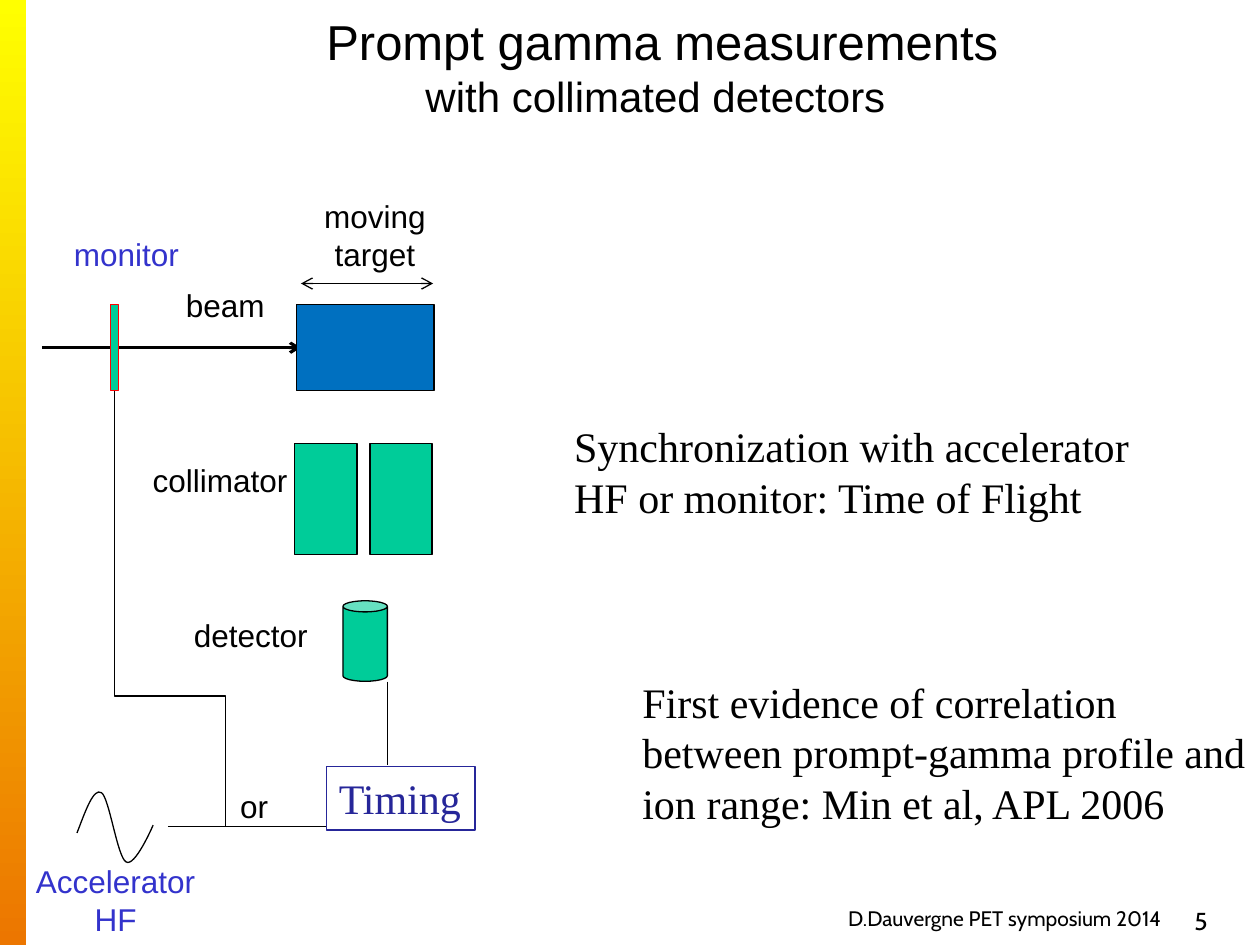
from dataclasses import dataclass

from lxml import etree
from pptx import Presentation
from pptx.dml.color import RGBColor
from pptx.enum.shapes import MSO_CONNECTOR, MSO_SHAPE
from pptx.enum.text import MSO_ANCHOR, PP_ALIGN
from pptx.oxml.ns import qn
from pptx.util import Pt

RECTANGLE, CAN = MSO_SHAPE.RECTANGLE, MSO_SHAPE.CAN
STRAIGHT, ELBOW = MSO_CONNECTOR.STRAIGHT, MSO_CONNECTOR.ELBOW
LEFT, CENTER = PP_ALIGN.LEFT, PP_ALIGN.CENTER
TOP, MIDDLE = MSO_ANCHOR.TOP, MSO_ANCHOR.MIDDLE


@dataclass(frozen=True)
class Theme:
    black: str = "000000"
    label_blue: str = "3333CC"
    timing_blue: str = "262699"
    target_blue: str = "0070C0"
    green: str = "00CC99"
    red: str = "FF0000"
    bar_top: str = "FFFF00"
    bar_bottom: str = "EC7600"
    sans: str = "Arial"
    serif: str = "Times New Roman"
    footer: str = "Cabin"
    title_size: int = 28
    body_size: int = 24
    label_size: int = 18
    number_size: int = 14
    footer_size: int = 12
    thin: float = 0.75
    thick: float = 1.75


THEME = Theme()


def color(value):
    return RGBColor.from_string(value)


def points(values):
    return [Pt(value) for value in values]


def write(frame, lines, font, ink=THEME.black, align=LEFT, wrap=True, anchor=TOP):
    """Fill a text frame with (text, size) paragraphs."""
    frame.word_wrap = wrap
    frame.vertical_anchor = anchor
    for index, (text, size) in enumerate(lines):
        para = frame.add_paragraph() if index else frame.paragraphs[0]
        para.text = text
        para.alignment = align
        para.font.name = font
        para.font.size = Pt(size)
        para.font.color.rgb = color(ink)


def add_text(page, place, lines, font, **style):
    box = page.shapes.add_textbox(*points(place))
    write(box.text_frame, lines, font, **style)


def add_label(page, place, text, ink=THEME.black):
    add_text(page, place, [(text, THEME.label_size)], THEME.sans, ink=ink, align=CENTER)


def set_outline(shape, ink, width=THEME.thin):
    shape.line.color.rgb = color(ink)
    shape.line.width = Pt(width)


def add_block(page, kind, place, fill=None, outline=THEME.black):
    block = page.shapes.add_shape(kind, *points(place))
    block.shadow.inherit = False
    if fill:
        block.fill.solid()
        block.fill.fore_color.rgb = color(fill)
    else:
        block.fill.background()
    set_outline(block, outline)
    return block


def add_line(page, ends, width=THEME.thin, arrows=(), kind=STRAIGHT):
    """Draw a connector; arrows names the ends ("headEnd", "tailEnd") to mark."""
    line = page.shapes.add_connector(kind, *points(ends))
    set_outline(line, THEME.black, width)
    for end in arrows:
        etree.SubElement(line.line._get_or_add_ln(), qn(f"a:{end}"), type="arrow")
    etree.SubElement(line._element.spPr, qn("a:effectLst"))
    return line


def add_vertical_elbow(page, start, end, bend):
    """Elbow that leaves and arrives vertically: a flipped elbow turned by 270 degrees."""
    (x1, y1), (x2, y2) = start, end
    middle_x, middle_y = (x1 + x2) / 2, (y1 + y2) / 2
    half_length, half_width = (y2 - y1) / 2, (x2 - x1) / 2
    ends = (middle_x + half_length, middle_y - half_width,
            middle_x - half_length, middle_y + half_width)
    elbow = add_line(page, ends, kind=ELBOW)
    properties = elbow._element.spPr
    properties.find(qn("a:xfrm")).set("rot", str(270 * 60000))
    adjustments = properties.find(qn("a:prstGeom")).find(qn("a:avLst"))
    etree.SubElement(adjustments, qn("a:gd"), name="adj1", fmla=f"val {round(bend * 100000)}")


def add_curve(page, start, controls):
    """Draw an open curve; every three control points make one Bézier segment."""
    builder = page.shapes.build_freeform(*points(start), scale=1.0)
    builder.add_line_segments([points(point) for point in controls], close=False)
    curve = builder.convert_to_shape()
    curve.shadow.inherit = False
    curve.fill.background()
    set_outline(curve, THEME.black)
    outline = next(curve._element.iter(qn("a:path")))
    segments = outline.findall(qn("a:lnTo"))
    for first in range(0, len(segments), 3):
        bezier = etree.SubElement(outline, qn("a:cubicBezTo"))
        for segment in segments[first:first + 3]:
            bezier.append(segment[0])
            outline.remove(segment)


def add_frame(page):
    """Side bar, footer, page number and title."""
    bar = add_block(page, RECTANGLE, (0, 0, 15, 540))
    bar.line.fill.background()
    bar.fill.gradient()
    bar.fill.gradient_angle = 270
    for stop, value in zip(bar.fill.gradient_stops, (THEME.bar_top, THEME.bar_bottom)):
        stop.color.rgb = color(value)
    add_text(page, (473, 514, 202.5, 22), [("D.Dauvergne PET symposium 2014", THEME.footer_size)],
             THEME.footer, align=CENTER, wrap=False)
    add_text(page, (675.5, 514, 41, 24), [("5", THEME.number_size)], THEME.footer, wrap=False)
    add_text(page, (39, 0, 671, 76),
             [(" Prompt gamma measurements", THEME.title_size),
              ("with collimated detectors", THEME.body_size)],
             THEME.sans, align=CENTER, anchor=MIDDLE)


def add_setup(page):
    """Beam, target, collimator and detector."""
    add_line(page, (24, 198.7, 172, 198.7), THEME.thick, ["tailEnd"])
    add_block(page, RECTANGLE, (169.3, 174.2, 78.7, 49), THEME.target_blue)
    for left in (168.5, 211.5):
        add_block(page, RECTANGLE, (left, 253.5, 35.5, 63.5), THEME.green)
    add_block(page, CAN, (196, 343.3, 25.4, 46), THEME.green)
    add_line(page, (172, 162, 247.5, 162), arrows=["headEnd", "tailEnd"])
    add_block(page, RECTANGLE, (63.3, 174.2, 4.3, 49), THEME.green, THEME.red)


def add_timing(page):
    """Accelerator wave and the wiring into the timing box."""
    add_curve(page, (44, 476), [
        (49, 463), (53.5, 450), (58, 453), (62.5, 456), (67, 489.5), (72, 492.5),
        (77, 496), (87.5, 471.5), (87.5, 471.5)])
    add_vertical_elbow(page, (65.5, 223.2), (129, 472.5), 0.7)
    add_line(page, (96, 472.5, 186.5, 472.5))
    add_line(page, (221.4, 389.5, 221.4, 437))
    timing = add_block(page, RECTANGLE, (186.5, 438, 85, 36.3), outline=THEME.timing_blue)
    write(timing.text_frame, [("Timing", THEME.body_size)], THEME.serif,
          ink=THEME.timing_blue, wrap=False)


def add_labels(page):
    width, height = 94.5, 29
    add_label(page, (167, 109, width, 51), "moving target")
    add_label(page, (11, 489, 110, 51), "Accelerator HF", THEME.label_blue)
    add_label(page, (25, 131, width, height), "monitor", THEME.label_blue)
    for left, top, text in (
            (81.5, 160, "beam"), (78.5, 260, "collimator"),
            (96, 348.5, "detector"), (98, 446, "or")):
        add_label(page, (left, top, width, height), text)


def add_notes_on_right(page):
    for place, text in (
            ((321, 237, 360, 65.5),
             "Synchronization with accelerator HF or monitor: Time of Flight"),
            ((360, 383, 360, 94.5),
             "First evidence of correlation between prompt-gamma profile and "
             "ion range: Min et al, APL 2006")):
        add_text(page, place, [(text, THEME.body_size)], THEME.serif)


def main():
    deck = Presentation()
    deck.slide_width, deck.slide_height = Pt(720), Pt(540)
    page = deck.slides.add_slide(deck.slide_layouts[6])
    add_frame(page)
    add_setup(page)
    add_timing(page)
    add_labels(page)
    add_notes_on_right(page)
    deck.save("out.pptx")


if __name__ == "__main__":
    main()
